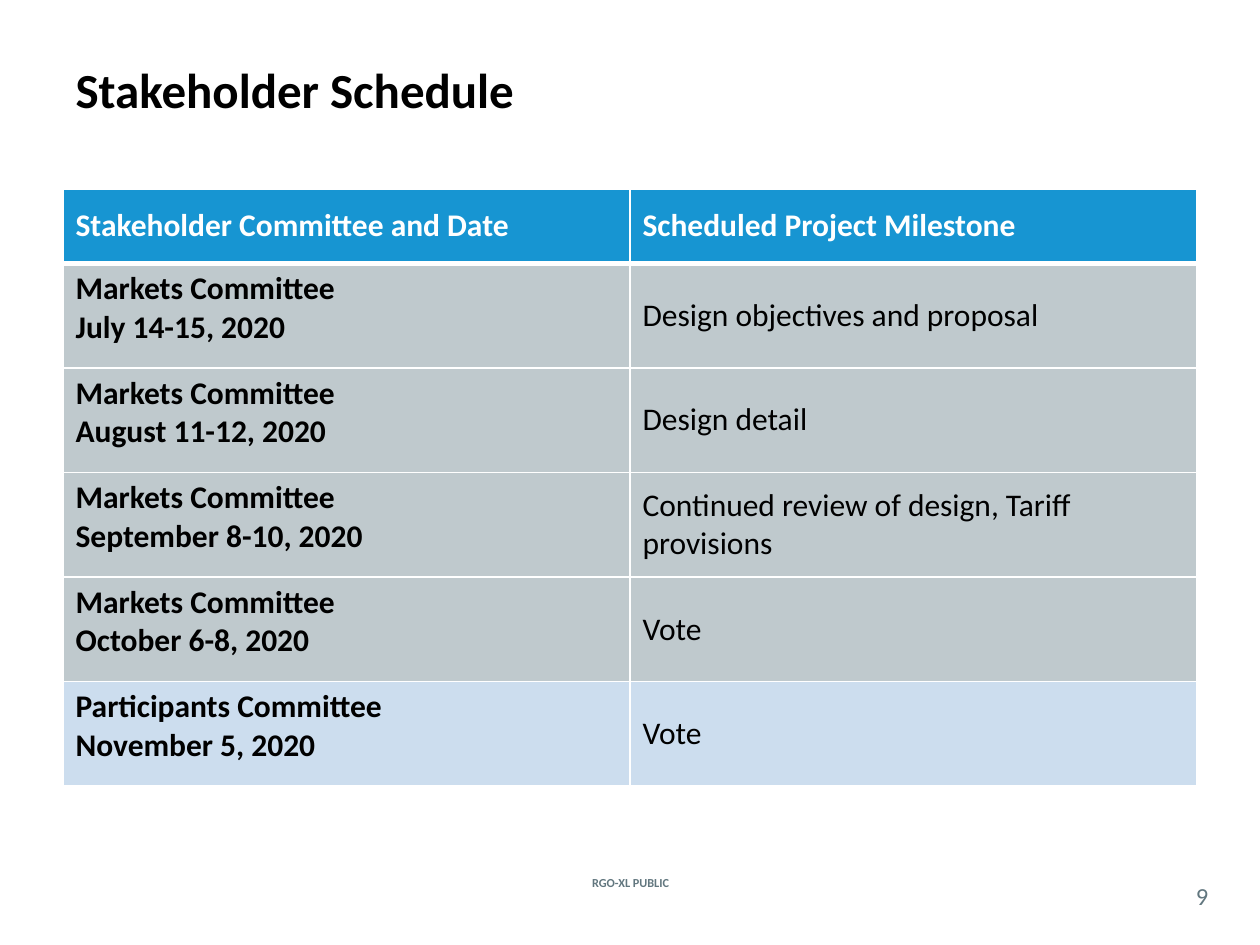
from dataclasses import dataclass

from lxml import etree
from pptx import Presentation
from pptx.dml.color import RGBColor
from pptx.enum.text import MSO_ANCHOR, PP_ALIGN
from pptx.oxml.ns import qn
from pptx.util import Inches, Pt

LEFT, CENTER = PP_ALIGN.LEFT, PP_ALIGN.CENTER
TOP, MIDDLE = MSO_ANCHOR.TOP, MSO_ANCHOR.MIDDLE

FONT = "Calibri"
WHITE, BLACK, SLATE = "FFFFFF", "000000", "62777F"
BLUE, GREY, PALE_BLUE = "1795D2", "BFC9CD", "CCDDEE"
SLIDE_WIDTH, SLIDE_HEIGHT = 10, 7.5
MARGIN = SLIDE_WIDTH / 20
CONTENT_WIDTH = SLIDE_WIDTH - 2 * MARGIN
TABLE_TOP = SLIDE_HEIGHT / 5
HEADER_HEIGHT, MEETING_HEIGHT = 0.59, 0.83


@dataclass(frozen=True)
class TextStyle:
    size: float
    color: str
    bold: bool = False
    align: PP_ALIGN = LEFT
    anchor: MSO_ANCHOR = MIDDLE


@dataclass(frozen=True)
class Meeting:
    committee_and_date: str
    milestone: str
    fill: str = GREY


MEETINGS = [
    Meeting("Markets Committee\nJuly 14-15, 2020", "Design objectives and proposal"),
    Meeting("Markets Committee\vAugust 11-12, 2020", "Design detail"),
    Meeting("Markets Committee\vSeptember 8-10, 2020",
            "Continued review of design, Tariff provisions"),
    Meeting("Markets Committee\nOctober 6-8, 2020", "Vote"),
    Meeting("Participants Committee\nNovember 5, 2020", "Vote", PALE_BLUE),
]

TITLE_STYLE = TextStyle(28, BLACK, bold=True)
HEADER_STYLE = TextStyle(18, WHITE, bold=True)
DATE_STYLE = TextStyle(18, BLACK, bold=True, anchor=TOP)
MILESTONE_STYLE = TextStyle(18, BLACK)
FOOTER_STYLE = TextStyle(7, SLATE, bold=True, align=CENTER)
NUMBER_STYLE = TextStyle(14, SLATE, align=CENTER)


def rgb(color: str) -> RGBColor:
    """Turn a hex string into a colour."""
    return RGBColor.from_string(color)


def write(frame, text: str, style: TextStyle) -> None:
    """Fill a text frame and format all its runs."""
    frame.text = text
    for paragraph in frame.paragraphs:
        paragraph.alignment = style.align
        for run in paragraph.runs:
            run.font.name = FONT
            run.font.size = Pt(style.size)
            run.font.bold = style.bold
            run.font.color.rgb = rgb(style.color)


def add_label(slide, text: str, style: TextStyle, left: float, top: float,
              width: float, height: float) -> None:
    """Add a text box without margins."""
    box = slide.shapes.add_textbox(*map(Inches, (left, top, width, height)))
    frame = box.text_frame
    frame.word_wrap = True
    frame.vertical_anchor = style.anchor
    frame.margin_left = frame.margin_right = 0
    frame.margin_top = frame.margin_bottom = 0
    write(frame, text, style)


def set_borders(cell, top: float, bottom: float) -> None:
    """Draw white cell borders, with the top and bottom widths in points."""
    properties = cell._tc.get_or_add_tcPr()
    widths = {"a:lnL": 1, "a:lnR": 1, "a:lnT": top, "a:lnB": bottom}
    for position, (tag, width) in enumerate(widths.items()):
        line = etree.Element(qn(tag), w=str(Pt(width)))
        fill = etree.SubElement(line, qn("a:solidFill"))
        etree.SubElement(fill, qn("a:srgbClr"), val=WHITE)
        properties.insert(position, line)


def fill_cell(cell, text: str, style: TextStyle, fill: str,
              top: float = 1, bottom: float = 1) -> None:
    """Write and paint one table cell."""
    write(cell.text_frame, text, style)
    cell.vertical_anchor = style.anchor
    cell.fill.solid()
    cell.fill.fore_color.rgb = rgb(fill)
    set_borders(cell, top, bottom)


def add_schedule(slide, meetings: list[Meeting]) -> None:
    """Add the table of committees, dates and milestones."""
    height = HEADER_HEIGHT + MEETING_HEIGHT * len(meetings)
    schedule = slide.shapes.add_table(
        len(meetings) + 1, 2, Inches(MARGIN), Inches(TABLE_TOP),
        Inches(CONTENT_WIDTH), Inches(height)).table
    for row in schedule.rows:
        row.height = Inches(MEETING_HEIGHT)
    schedule.rows[0].height = Inches(HEADER_HEIGHT)
    headings = ("Stakeholder Committee and Date", "Scheduled Project Milestone")
    for column, heading in enumerate(headings):
        fill_cell(schedule.cell(0, column), heading, HEADER_STYLE, BLUE, bottom=3)
    for row, meeting in enumerate(meetings, start=1):
        top = 3 if row == 1 else 1
        fill_cell(schedule.cell(row, 0), meeting.committee_and_date,
                  DATE_STYLE, meeting.fill, top)
        fill_cell(schedule.cell(row, 1), meeting.milestone,
                  MILESTONE_STYLE, meeting.fill, top)


def main() -> None:
    """Build the stakeholder schedule slide."""
    deck = Presentation()
    deck.slide_width, deck.slide_height = Inches(SLIDE_WIDTH), Inches(SLIDE_HEIGHT)
    slide = deck.slides.add_slide(deck.slide_layouts[5])
    title = slide.shapes.title
    title.left, title.top = Inches(MARGIN), Inches(0.08)
    title.width, title.height = Inches(CONTENT_WIDTH), Inches(SLIDE_HEIGHT / 6)
    title.text_frame.vertical_anchor = TITLE_STYLE.anchor
    write(title.text_frame, "Stakeholder Schedule", TITLE_STYLE)
    add_schedule(slide, MEETINGS)
    add_label(slide, "RGO-XL PUBLIC", FOOTER_STYLE, 4.27, 6.92, 1.47, 0.17)
    add_label(slide, "9", NUMBER_STYLE, 9.33, 6.96, 0.42, 0.29)
    deck.save("out.pptx")


if __name__ == "__main__":
    main()
